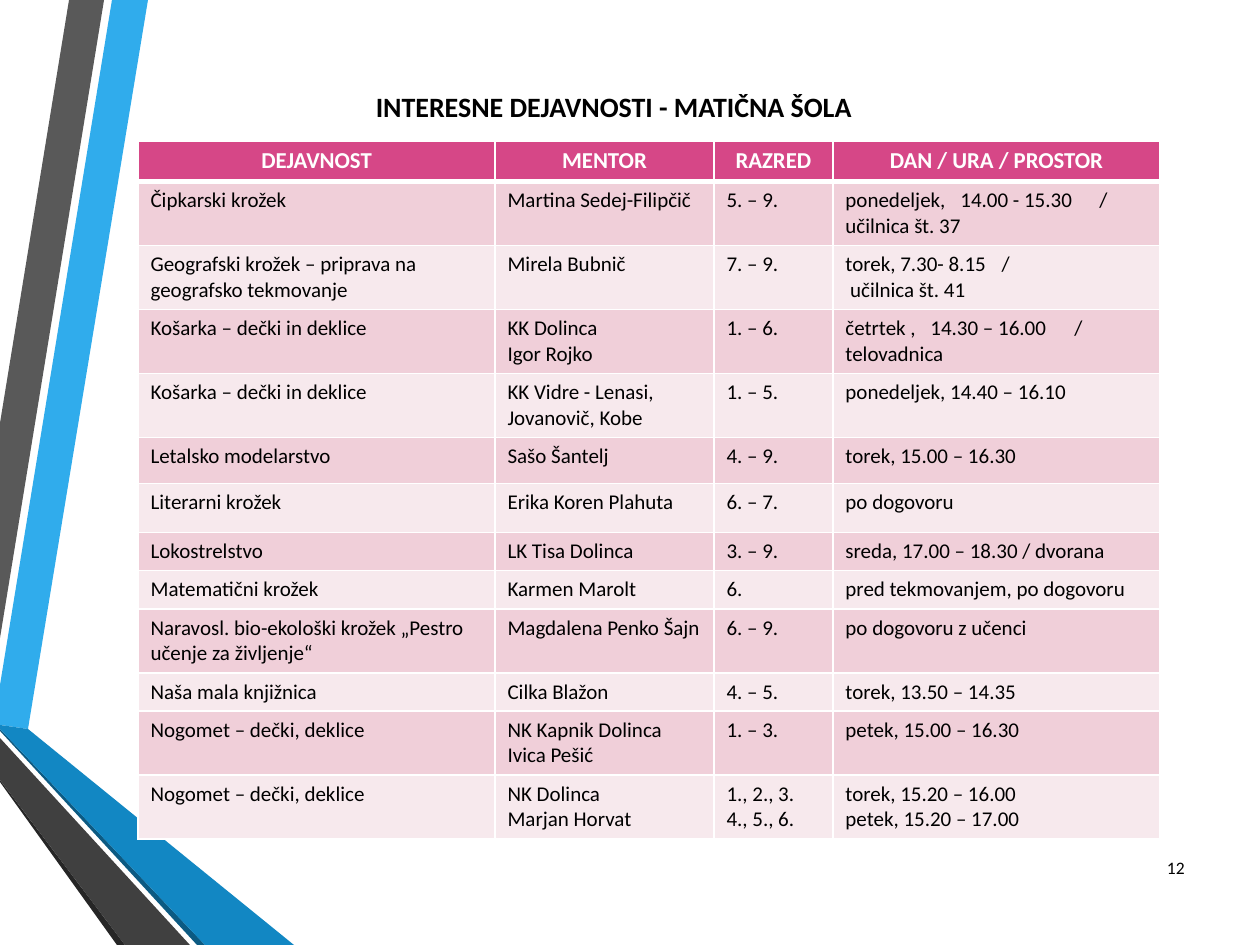
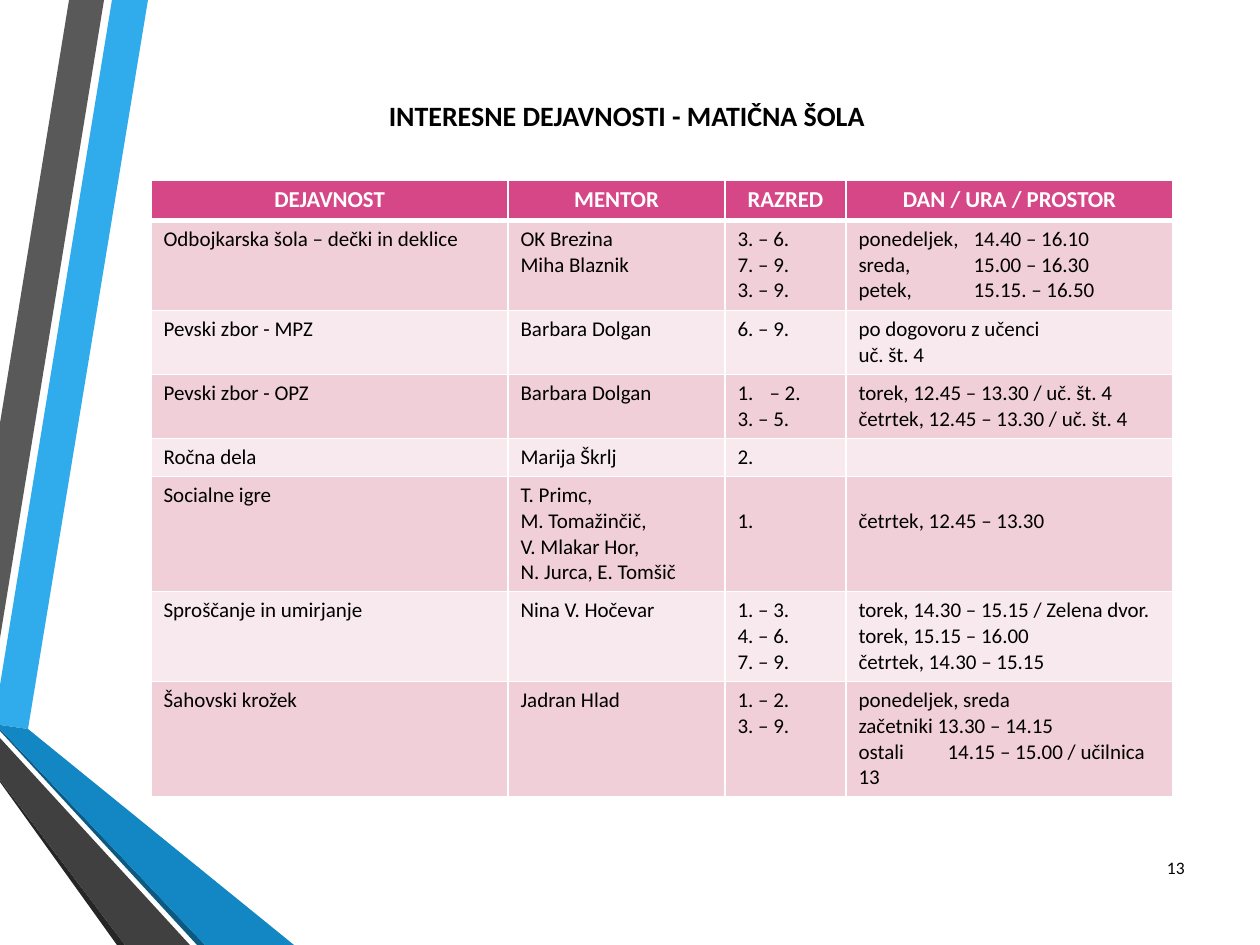
from lxml.etree import SubElement
from pptx import Presentation
from pptx.dml.color import RGBColor
from pptx.enum.text import MSO_ANCHOR, MSO_AUTO_SIZE, PP_ALIGN
from pptx.oxml.ns import qn
from pptx.util import Pt

SCALE = 914400 / 126  # EMU in one px
FONT = "Calibri"
BLACK, WHITE = "000000", "FFFFFF"
HEADER_FILL = "D64787"
BAND_FILLS = ("F0CFD9", "F7E9ED")
CELL_TOP, LINE_HEIGHT = 6, 26

TITLE = "INTERESNE DEJAVNOSTI - MATIČNA ŠOLA "
HEADER = ("DEJAVNOST", "MENTOR", "RAZRED", "DAN / URA / PROSTOR")

RIBBONS = [
    ("30ACEC", [(0, 685), (0, 725), (28, 729), (148, 0), (112, 0)]),
    ("595959", [(104, 0), (69, 0), (0, 423), (0, 638)]),
    ("262626", [(0, 780), (0, 782), (117, 945), (125, 945)]),
    ("0C5A82", [(0, 729), (0, 731), (197, 945), (205, 945)]),
    ("1287C3", [(0, 729), (205, 945), (294, 945), (28, 729), (0, 725)]),
    ("404040", [(0, 780), (125, 945), (190, 945), (0, 738)]),
]

# Tab stops in px for lines with tabs, by the first word of the line
TAB_STOPS = {
    "ponedeljek,": (115, 254),
    "sreda,": (115,),
    "petek,": (115,),
    "četrtek": (85, 229),
    "torek,": (156,),
    "ostali": (89,),
}

# "numbered" cells start with an automatic number, "lowered" ones a line down
SLIDES = [
    {
        "number": "12",
        "title_at": (74, 87),
        "table_at": (138, 141),
        "cols": (357, 219, 119, 327),
        "heights": (40, 64, 64, 64, 64, 46, 49, 38, 38, 64, 38, 64, 64),
        "numbered": (),
        "lowered": (),
        "rows": [
            ("Čipkarski krožek", "Martina Sedej-Filipčič", "5. – 9.",
             "ponedeljek,\t14.00 - 15.30\t/ učilnica št. 37"),
            ("Geografski krožek – priprava na geografsko tekmovanje",
             "Mirela Bubnič", "7. – 9.",
             "torek, 7.30- 8.15\t/\n učilnica št. 41"),
            ("Košarka – dečki in deklice", "KK Dolinca\nIgor Rojko", "1. – 6.",
             "četrtek ,\t14.30 – 16.00\t/ telovadnica"),
            ("Košarka – dečki in deklice", "KK Vidre - Lenasi, Jovanovič, Kobe",
             "1. – 5.", "ponedeljek, 14.40 – 16.10"),
            ("Letalsko modelarstvo", "Sašo Šantelj", "4. – 9.",
             "torek, 15.00 – 16.30"),
            ("Literarni krožek", "Erika Koren Plahuta", "6. – 7.",
             "po dogovoru"),
            ("Lokostrelstvo", "LK Tisa Dolinca", "3. – 9.",
             "sreda, 17.00 – 18.30 / dvorana"),
            ("Matematični krožek", "Karmen Marolt", "6.",
             "pred tekmovanjem, po dogovoru"),
            ("Naravosl. bio-ekološki krožek „Pestro učenje za življenje“",
             "Magdalena Penko Šajn", "6. – 9.", "po dogovoru z učenci"),
            ("Naša mala knjižnica", "Cilka Blažon", "4. – 5.",
             "torek, 13.50 – 14.35"),
            ("Nogomet – dečki, deklice", "NK Kapnik Dolinca\nIvica Pešić",
             "1. – 3.", "petek, 15.00 – 16.30"),
            ("Nogomet – dečki, deklice", "NK Dolinca\nMarjan Horvat",
             "1., 2., 3.\n4., 5., 6.",
             "torek, 15.20 – 16.00\npetek, 15.20 – 17.00"),
        ],
    },
    {
        "number": "13",
        "title_at": (87, 96),
        "table_at": (151, 180),
        "cols": (357, 217, 121, 327),
        "heights": (40, 90, 64, 64, 38, 115, 90, 115),
        "numbered": ((3, 2),),
        "lowered": ((5, 2), (5, 3)),
        "rows": [
            ("Odbojkarska šola – dečki in deklice", "OK Brezina\nMiha Blaznik",
             "3. – 6.\n7. – 9.\n3. – 9.",
             "ponedeljek,\t14.40 – 16.10\nsreda,\t15.00 – 16.30\n"
             "petek,\t15.15. – 16.50"),
            ("Pevski zbor - MPZ", "Barbara Dolgan", "6. – 9.",
             "po dogovoru z učenci\nuč. št. 4"),
            ("Pevski zbor - OPZ", "Barbara Dolgan", "– 2.\n3. – 5.",
             "torek, 12.45 – 13.30 / uč. št. 4\n"
             "četrtek, 12.45 – 13.30 / uč. št. 4"),
            ("Ročna dela", "Marija Škrlj", "2.", ""),
            ("Socialne igre",
             "T. Primc,\nM. Tomažinčič,\nV. Mlakar Hor,\nN. Jurca, E. Tomšič",
             "1.", "četrtek, 12.45 – 13.30"),
            ("Sproščanje in umirjanje", "Nina V. Hočevar",
             "1. – 3.\n4. – 6.\n7. – 9.",
             "torek, 14.30 – 15.15 / Zelena dvor.\ntorek, 15.15 – 16.00\n"
             "četrtek, 14.30 – 15.15"),
            ("Šahovski krožek", "Jadran Hlad", "1. – 2.\n3. – 9.",
             "ponedeljek, sreda\nzačetniki 13.30 – 14.15\n"
             "ostali\t14.15 – 15.00 / učilnica 13"),
        ],
    },
]


def px(n):
    return round(n * SCALE)


def rgb(color):
    return RGBColor.from_string(color)


def add_text(p, text, size, color=BLACK, bold=False, align=PP_ALIGN.LEFT):
    p.alignment = align
    r = p.add_run()
    r.text = text
    r.font.name, r.font.size, r.font.bold = FONT, Pt(size), bold
    r.font.color.rgb = rgb(color)


def add_number(p):
    """Number the paragraph automatically, with a hanging indent."""
    pPr = p._p.get_or_add_pPr()
    pPr.set("marL", str(px(32)))
    pPr.set("indent", str(-px(32)))
    SubElement(pPr, qn("a:buFont"), typeface="+mj-lt")
    SubElement(pPr, qn("a:buAutoNum"), type="arabicPeriod")


def add_tab_stops(p, stops):
    tabs = SubElement(p._p.get_or_add_pPr(), qn("a:tabLst"))
    for stop in stops:
        SubElement(tabs, qn("a:tab"), pos=str(px(stop)), algn="l")


def add_borders(cell, top, bottom):
    tcPr = cell._tc.get_or_add_tcPr()
    for side, width in (("L", 1), ("R", 1), ("T", top), ("B", bottom)):
        ln = SubElement(tcPr, qn(f"a:ln{side}"), w=str(Pt(width)))
        SubElement(SubElement(ln, qn("a:solidFill")), qn("a:srgbClr"), val=WHITE)


def style_cell(cell, row):
    add_borders(cell, 3 if row == 1 else 1, 3 if row == 0 else 1)
    cell.fill.solid()
    cell.fill.fore_color.rgb = rgb(BAND_FILLS[(row - 1) % 2] if row else HEADER_FILL)


def fill_body_cell(cell, text, numbered, lowered):
    tf = cell.text_frame
    if lowered:
        cell.margin_top = px(CELL_TOP + LINE_HEIGHT)
    if not text:
        SubElement(tf.paragraphs[0]._p, qn("a:endParaRPr"), sz="1200")
        return
    for i, line in enumerate(text.split("\n")):
        p = tf.add_paragraph() if i else tf.paragraphs[0]
        if numbered and i == 0:
            add_number(p)
        if "\t" in line:
            add_tab_stops(p, TAB_STOPS[line.split()[0]])
        add_text(p, line, 12)


def add_ribbons(slide, layout):
    """Draw the ribbons and hand them to the layout, behind its placeholders."""
    for i, (color, points) in enumerate(RIBBONS):
        builder = slide.shapes.build_freeform(*points[0], scale=SCALE)
        builder.add_line_segments(points[1:], close=True)
        sp = builder.convert_to_shape()
        sp.shadow.inherit = False
        sp.fill.solid()
        sp.fill.fore_color.rgb = rgb(color)
        sp.line.fill.background()
        layout.shapes.element.insert(2 + i, sp.element)


def add_title(slide, at):
    title = slide.shapes.title
    title.left, title.top = map(px, at)
    title.width, title.height = px(1086), px(55)
    tf = title.text_frame
    tf.auto_size = MSO_AUTO_SIZE.NONE
    tf.vertical_anchor = MSO_ANCHOR.TOP
    p = tf.paragraphs[0]
    p.line_spacing = 0.9
    add_text(p, TITLE, 16, bold=True, align=PP_ALIGN.CENTER)


def add_activities(slide, data):
    cols, heights = data["cols"], data["heights"]
    table = slide.shapes.add_table(
        len(heights), len(cols), *map(px, data["table_at"]),
        px(sum(cols)), px(sum(heights))).table
    table.horz_banding = False
    for col, width in zip(table.columns, cols):
        col.width = px(width)
    for row, height in zip(table.rows, heights):
        row.height = px(height)
    for r, texts in enumerate([HEADER, *data["rows"]]):
        for c, text in enumerate(texts):
            cell = table.cell(r, c)
            style_cell(cell, r)
            if r == 0:
                add_text(cell.text_frame.paragraphs[0], text, 13, WHITE,
                         bold=True, align=PP_ALIGN.CENTER)
            else:
                fill_body_cell(cell, text, (r, c) in data["numbered"],
                               (r, c) in data["lowered"])


def add_slide_number(slide, number):
    tf = slide.shapes.add_textbox(px(1140), px(843), px(57), px(50)).text_frame
    tf.word_wrap = True
    tf.vertical_anchor = MSO_ANCHOR.MIDDLE
    add_text(tf.paragraphs[0], number, 10, align=PP_ALIGN.RIGHT)


def main():
    prs = Presentation()
    prs.slide_width, prs.slide_height = px(1260), px(945)
    layout = prs.slide_layouts[5]
    for i, data in enumerate(SLIDES):
        slide = prs.slides.add_slide(layout)
        if i == 0:
            add_ribbons(slide, layout)
        add_title(slide, data["title_at"])
        add_activities(slide, data)
        add_slide_number(slide, data["number"])
    prs.save("out.pptx")


if __name__ == "__main__":
    main()
